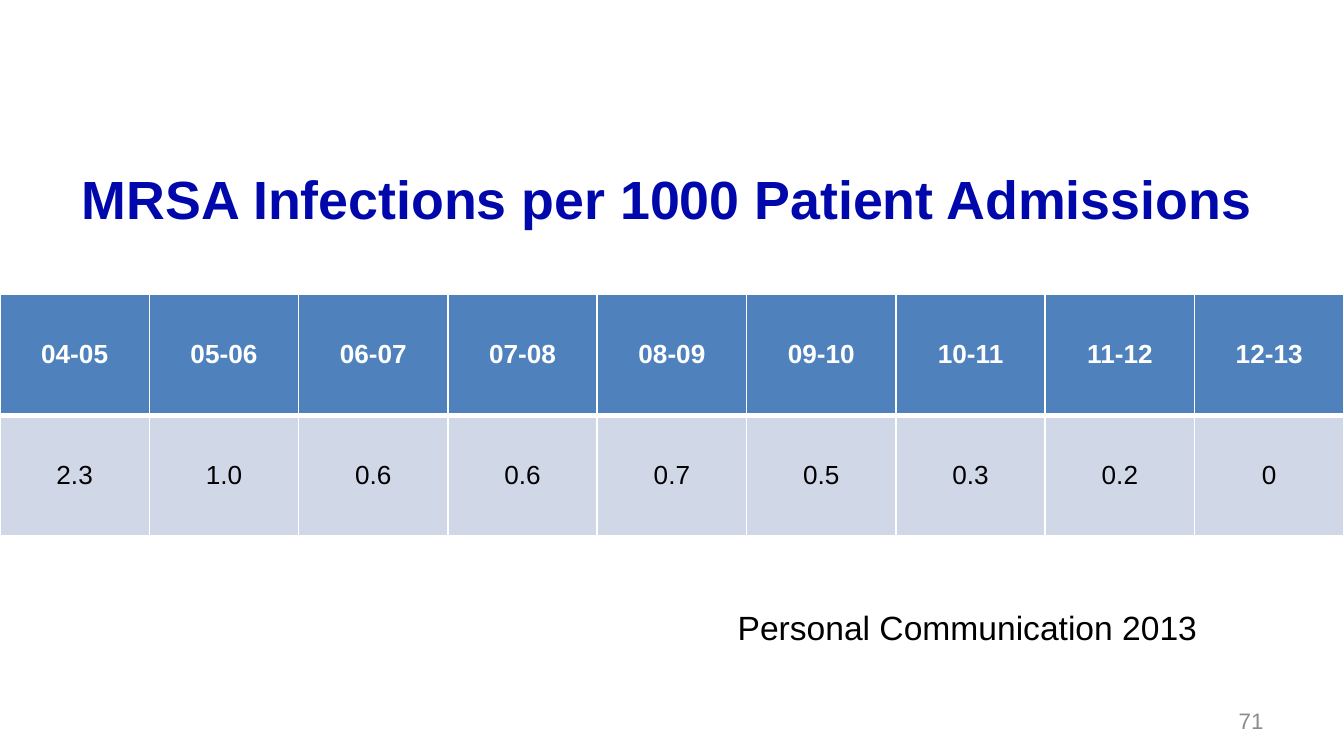
import pptx
import pptx.dml.color
import pptx.enum.text
import pptx.oxml
import pptx.oxml.ns
import pptx.util

WIDE = 10
HIGH = WIDE * 9 / 16
ALIGN = pptx.enum.text.PP_ALIGN
ANCHOR = pptx.enum.text.MSO_ANCHOR
YEARS = ["04-05", "05-06", "06-07", "07-08", "08-09",
         "09-10", "10-11", "11-12", "12-13"]
RATES = ["2.3", "1.0", "0.6", "0.6", "0.7", "0.5", "0.3", "0.2", "0"]


def inch(size):
    return pptx.util.Inches(size)


def color(code):
    return pptx.dml.color.RGBColor.from_string(code)


def write(frame, text, size=14, ink="000000", bold=False, align=ALIGN.LEFT):
    para = frame.paragraphs[0]
    para.alignment = align
    run = para.add_run()
    run.text = text
    font = run.font
    font.name, font.size, font.bold = "Arial", pptx.util.Pt(size), bold
    font.color.rgb = color(ink)


def title(slide, text):
    shape = slide.shapes.title
    shape.left, shape.top = inch(0.51), inch(1)
    shape.width, shape.height = inch(WIDE - 0.51), inch(0.94)
    frame = shape.text_frame
    frame.word_wrap = True
    frame.auto_size = pptx.enum.text.MSO_AUTO_SIZE.NONE
    frame.vertical_anchor = ANCHOR.MIDDLE
    write(frame, text, size=28.8, ink="0008AB", bold=True)


def label(slide, text, left, top, width, height, anchor=ANCHOR.TOP, **style):
    box = slide.shapes.add_textbox(*map(inch, (left, top, width, height)))
    frame = box.text_frame
    frame.word_wrap = True
    frame.vertical_anchor = anchor
    write(frame, text, **style)


def border(cell, sides):
    """Draw white lines; sides maps L, R, T, B, in that order, to points."""
    props = cell._tc.get_or_add_tcPr()
    space = pptx.oxml.ns.nsdecls("a")
    for side, points in sides.items():
        props.append(pptx.oxml.parse_xml(
            f'<a:ln{side} {space} w="{pptx.util.Pt(points)}"><a:solidFill>'
            f'<a:srgbClr val="FFFFFF"/></a:solidFill></a:ln{side}>'))


def fill_row(table, row, texts, fill, sides, **style):
    table.rows[row].height = inch(0.9)
    for col, text in enumerate(texts):
        cell = table.cell(row, col)
        border(cell, sides)
        cell.fill.solid()
        cell.fill.fore_color.rgb = color(fill)
        cell.vertical_anchor = ANCHOR.MIDDLE
        write(cell.text_frame, text, align=ALIGN.CENTER, **style)


def rates(slide):
    frame = slide.shapes.add_table(
        2, len(YEARS), 0, inch(2.19), inch(WIDE), inch(1.8))
    table = frame.table
    for col in table.columns:
        col.width = inch(WIDE / len(YEARS))
    fill_row(table, 0, YEARS, "4F81BD", {"L": 1, "R": 1, "T": 1, "B": 3},
             ink="FFFFFF", bold=True)
    fill_row(table, 1, RATES, "D0D8E8", {"L": 1, "R": 1, "B": 1})


def main():
    deck = pptx.Presentation()
    deck.slide_width, deck.slide_height = inch(WIDE), inch(HIGH)
    slide = deck.slides.add_slide(deck.slide_layouts[5])
    title(slide, "MRSA Infections per 1000 Patient Admissions")
    rates(slide)
    label(slide, "71", 7.17, 5.21, 2.33, 0.3, anchor=ANCHOR.MIDDLE,
          size=12, ink="8C8C8C", align=ALIGN.RIGHT)
    label(slide, "Personal Communication 2013", 5.39, 4.47, 4.25, 0.4, size=18)
    deck.save("out.pptx")


if __name__ == "__main__":
    main()
